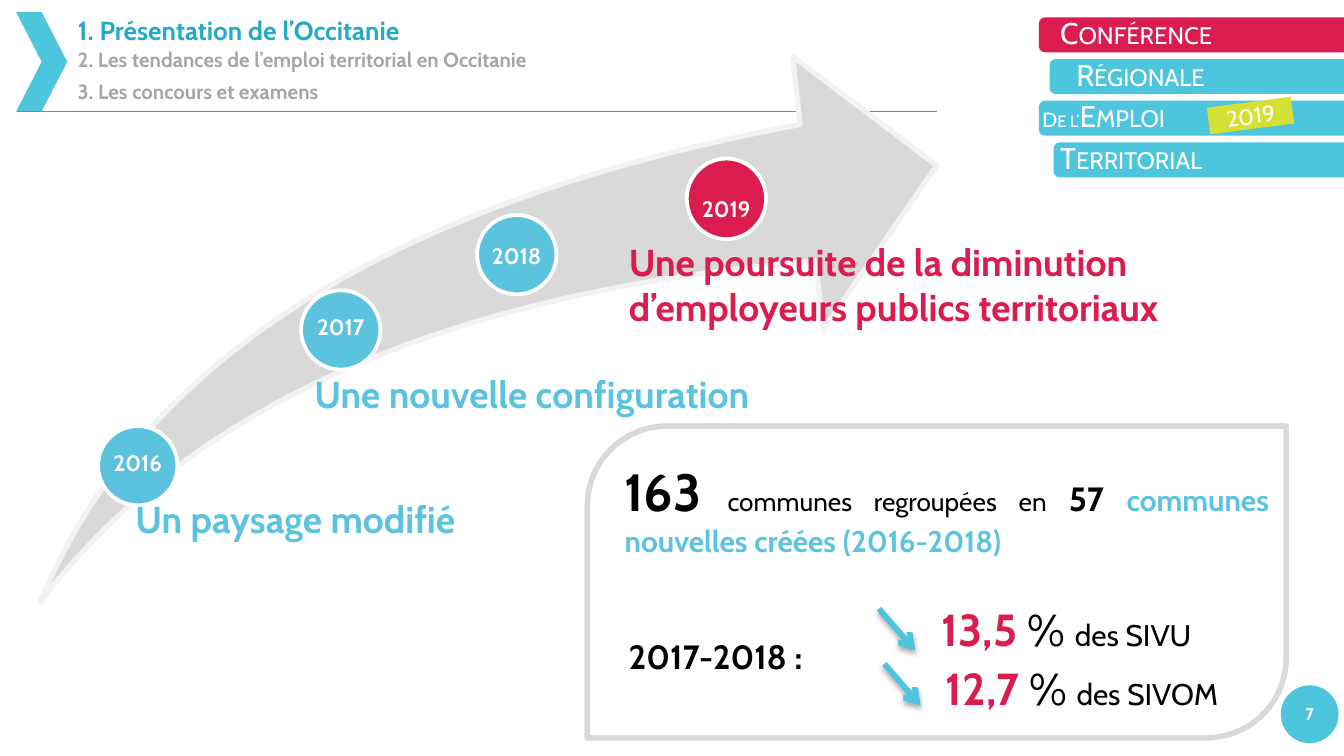
import pptx
import pptx.dml.color
import pptx.enum.shapes
import pptx.enum.text
import pptx.oxml
import pptx.oxml.ns
import pptx.util
from pptx.util import Inches

SHAPES = pptx.enum.shapes.MSO_SHAPE
ALIGN = pptx.enum.text.PP_ALIGN
ANCHOR = pptx.enum.text.MSO_ANCHOR
FONT = "Cabin"
COLORS = {
    "teal": "25AAC5", "cyan": "4CC5DD", "sky": "5BC3DE", "red": "DB1C4E",
    "lime": "D6E034", "white": "FFFFFF", "black": "000000", "muted": "A6A6A6",
    "grey": "D9D9D9", "pale": "F2F2F2",
}


def rgb(name):
    return pptx.dml.color.RGBColor.from_string(COLORS[name])


def write(shape, runs, align=ALIGN.LEFT, anchor=ANCHOR.TOP, small_caps=False):
    """Fill a shape with one paragraph of (text, size, color, bold[, font]) runs."""
    frame = shape.text_frame
    frame.word_wrap = True
    frame.auto_size = pptx.enum.text.MSO_AUTO_SIZE.NONE
    frame.vertical_anchor = anchor
    frame.margin_left = frame.margin_right = Inches(0.1)
    frame.margin_top = frame.margin_bottom = Inches(0.05)
    paragraph = frame.paragraphs[0]
    paragraph.alignment = align
    for text, size, color, bold, *font in runs:
        run = paragraph.add_run()
        run.text = text
        run.font.name = font[0] if font else FONT
        run.font.size = pptx.util.Pt(size)
        run.font.bold = bold
        run.font.color.rgb = rgb(color)
        if small_caps:
            run.font._element.set("cap", "small")


def add_text(slide, left, top, width, height, runs, **options):
    shape = slide.shapes.add_textbox(
        Inches(left), Inches(top), Inches(width), Inches(height))
    write(shape, runs, **options)


def add_shape(slide, kind, left, top, width, height,
              fill=None, line=None, line_width=1, adjustments=()):
    shape = slide.shapes.add_shape(
        kind, Inches(left), Inches(top), Inches(width), Inches(height))
    shape.shadow.inherit = False
    if fill:
        shape.fill.solid()
        shape.fill.fore_color.rgb = rgb(fill)
    else:
        shape.fill.background()
    if line:
        shape.line.color.rgb = rgb(line)
        shape.line.width = pptx.util.Pt(line_width)
    else:
        shape.line.fill.background()
    for index, value in enumerate(adjustments):
        shape.adjustments[index] = value
    return shape


def add_line(slide, start, end, color, width, arrow=False):
    """Draw a straight line; an arrow also gets a head and a soft shadow."""
    line = slide.shapes.add_connector(
        pptx.enum.shapes.MSO_CONNECTOR.STRAIGHT,
        *(Inches(value) for value in (*start, *end)))
    line.line.color.rgb = rgb(color)
    line.line.width = pptx.util.Pt(width)
    properties = line._element.spPr
    namespace = pptx.oxml.ns.nsdecls("a")
    shadow = ""
    if arrow:
        line.line._get_or_add_ln().append(
            pptx.oxml.parse_xml(f'<a:tailEnd {namespace} type="arrow"/>'))
        shadow = (
            f'<a:outerShdw blurRad="{pptx.util.Pt(3.1)}" dist="{pptx.util.Pt(1.8)}"'
            ' dir="5400000" rotWithShape="0"><a:srgbClr val="000000">'
            '<a:alpha val="35000"/></a:srgbClr></a:outerShdw>')
    properties.append(pptx.oxml.parse_xml(
        f"<a:effectLst {namespace}>{shadow}</a:effectLst>"))


def add_agenda(slide, left, top):
    """Place the title, the remaining chapters, the chevron and the rule."""
    title = slide.shapes.title
    title.left, title.top = Inches(left + 0.36), Inches(top - 0.03)
    title.width, title.height = Inches(7.36), Inches(0.34)
    write(title, [("1. Présentation de l’Occitanie", 14, "teal", True)])
    chapters = ("2. Les tendances de l’emploi territorial en Occitanie",
                "3. Les concours et examens")
    for index, chapter in enumerate(chapters):
        add_text(slide, left + 0.36, top + 0.21 + 0.24 * index, 7.2, 0.29,
                 [(chapter, 11, "muted", True)])
    add_shape(slide, SHAPES.CHEVRON, left, top, 0.38, 0.74, fill="cyan")
    add_line(slide, (left + 0.01, top + 0.74), (left + 6.85, top + 0.74), "teal", 0.75)


def add_timeline(slide, left, top):
    add_shape(slide, SHAPES.SWOOSH_ARROW, left, top, 6.67, 4.06, fill="grey",
              line="pale", line_width=2.75, adjustments=(0.25, 0.25))
    # year, circle offset, circle height, label drop inside the circle, color
    milestones = [
        ("2016", 0.43, 2.75, 0.59, 0.12, "sky"),
        ("2017", 1.94, 1.74, 0.59, 0.12, "sky"),
        ("2018", 3.25, 1.18, 0.59, 0.15, "sky"),
        ("2019", 4.81, 0.76, 0.6, 0.22, "red"),
    ]
    for year, x, y, height, drop, color in milestones:
        add_shape(slide, SHAPES.OVAL, left + x, top + y, 0.59, height,
                  fill=color, line="white", line_width=2)
        add_text(slide, left + x - 0.14, top + y + drop, 0.87, 0.3,
                 [(year, 12, "white", True)], align=ALIGN.CENTER)
    headings = [
        ("Un paysage modifié", 0.61, 3.22, 3.46, 0.45, "sky"),
        ("Une nouvelle configuration", 1.94, 2.29, 4.88, 0.45, "sky"),
        ("Une poursuite de la diminution d’employeurs publics territoriaux",
         4.28, 1.31, 5.09, 0.79, "red"),
    ]
    for text, x, y, width, height, color in headings:
        add_text(slide, left + x, top + y, width, height, [(text, 20, color, True)])


def add_key_figures(slide, left, top):
    add_shape(slide, SHAPES.ROUND_2_DIAG_RECTANGLE, left, top, 5.2, 2.32,
              line="grey", line_width=3, adjustments=(0.256, 0))
    add_text(slide, left + 0.18, top + 0.2, 4.99, 0.52, [
        ("163", 28, "black", True),
        (" ", 24, "red", True),
        ("communes regroupées en ", 14, "black", False),
        ("57", 18, "black", True),
        (" ", 16, "red", True),
        ("communes nouvelles créées (2016-2018)", 16, "sky", True),
    ], align=ALIGN.JUSTIFY)
    add_text(slide, left + 0.21, top + 1.51, 1.76, 0.4,
             [("2017-2018 :", 18, "black", True)])
    decreases = [
        (2.17, 1.36, 2.54, 1.26, [("13,5 ", 24, "red", True), ("% ", 24, "black", False),
                                  ("des SIVU", 16, "black", False)]),
        (2.21, 1.77, 2.57, 1.7, [("12,7 ", 24, "red", True), ("%", 24, "black", False),
                                 (" ", 20, "black", False, "Times New Roman"),
                                 ("des SIVOM", 16, "black", False)]),
    ]
    for arrow_x, arrow_y, text_x, text_y, runs in decreases:
        x, y = left + arrow_x, top + arrow_y
        add_line(slide, (x, y), (x + 0.27, y + 0.31), "cyan", 3, arrow=True)
        add_text(slide, left + text_x, top + text_y, 4.39, 0.5, runs)


def add_event_banner(slide, left, top, right):
    """Stack the four event bars, which all run to the right edge."""
    # bar offset, label offset, label width, bar color, words with their sizes
    bars = [
        (0, 0.06, 1.38, "red", [("Conférence", 16)]),
        (0.08, 0.18, 1.26, "cyan", [("Régionale", 16)]),
        (0, -0.1, 1.94, "cyan", [(" De l’", 11), ("Emploi", 16)]),
        (0.11, 0.06, 1.46, "cyan", [("Territorial", 16)]),
    ]
    for index, (bar_x, text_x, text_width, color, words) in enumerate(bars):
        y = top + 0.31 * index
        add_shape(slide, SHAPES.ROUNDED_RECTANGLE, left + bar_x, y,
                  right - left - bar_x, 0.26, fill=color)
        add_text(slide, left + text_x, y - 0.07, text_width, 0.37,
                 [(text, size, "white", False) for text, size in words],
                 small_caps=True)
    year = add_shape(slide, SHAPES.RECTANGLE, left + 1.26, top + 0.63, 0.63, 0.2,
                     fill="lime")
    year.rotation = 352.7
    write(year, [("2019", 12, "white", False)], align=ALIGN.CENTER, anchor=ANCHOR.MIDDLE)


def add_page_number(slide, left, top, number):
    badge = add_shape(slide, SHAPES.OVAL, left, top, 0.43, 0.43, fill="cyan")
    write(badge, [(number, 9, "white", True)], align=ALIGN.CENTER, anchor=ANCHOR.MIDDLE)
    frame = badge.text_frame
    frame.margin_left = frame.margin_right = frame.margin_top = frame.margin_bottom = 0


def main():
    presentation = pptx.Presentation()
    presentation.slide_width = Inches(10)
    presentation.slide_height = Inches(10) * 9 // 16
    slide = presentation.slides.add_slide(presentation.slide_layouts[5])
    add_agenda(slide, 0.12, 0.09)
    add_page_number(slide, 9.53, 5.1, "7")
    add_timeline(slide, 0.3, 0.42)
    add_key_figures(slide, 4.37, 3.17)
    add_event_banner(slide, 7.73, 0.13, 10.04)
    presentation.save("out.pptx")


if __name__ == "__main__":
    main()
